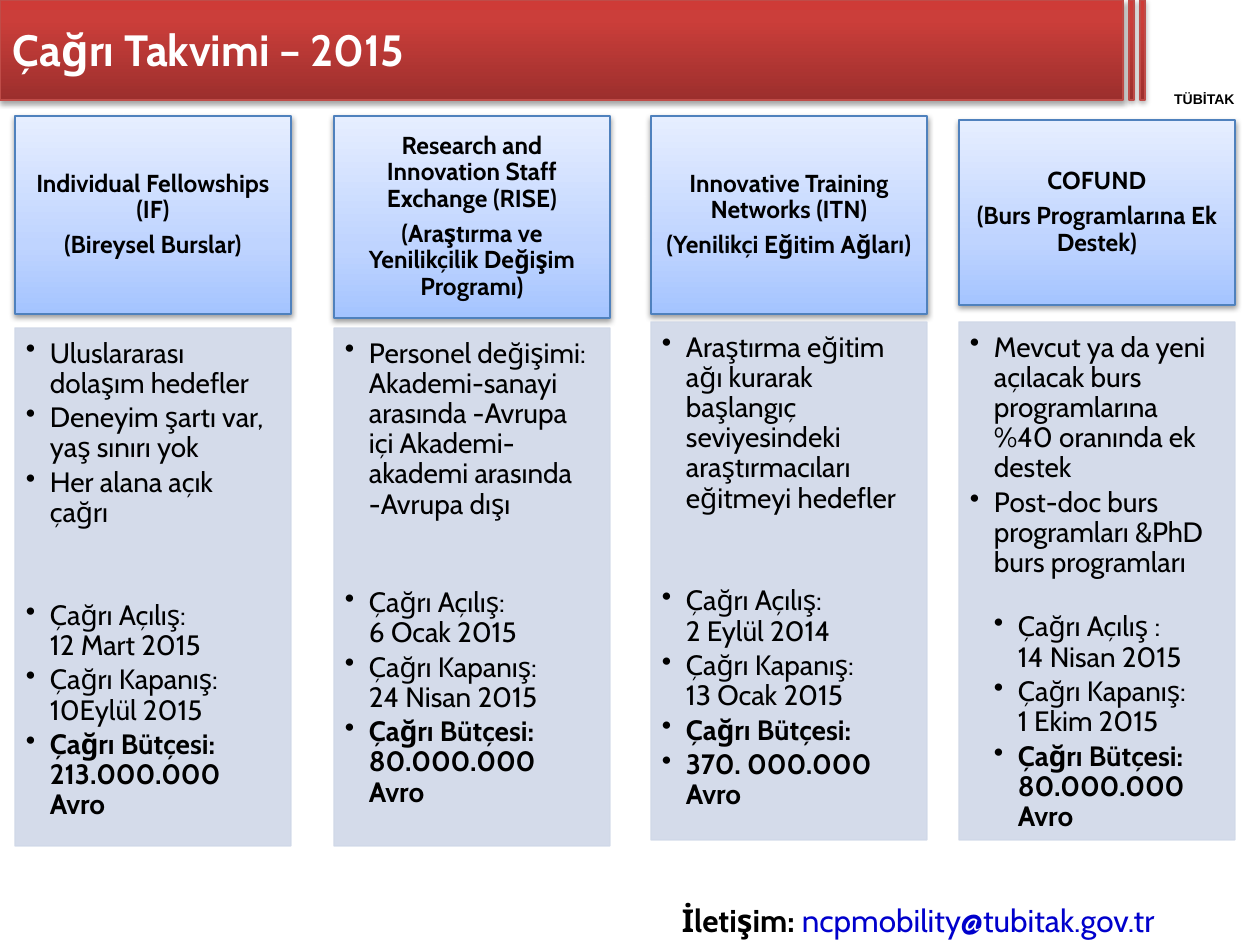
import lxml.etree
import pptx
import pptx.dml.color
import pptx.enum.shapes
import pptx.enum.text
import pptx.oxml.ns
import pptx.util

EMU_PER_PX = 914400 / 126
COLORS = {
    "black": "000000",
    "white": "FFFFFF",
    "link": "0000CC",
    "banner_line": "BF4C48",
    "card_line": "4F81BD",
    "panel": "D0D8E8",
}
BANNER_STOPS = [(0, "9C2F2D"), (80, "CB3E3A"), (100, "CE3B37")]
CARD_STOPS = [(0, "A4C4FF"), (35, "BFD4FF"), (100, "E6EEFF")]
CARD_WIDTH = 276
PANEL_HEIGHT = 518
INDENT = 24

PROGRAMMES = [
    {
        "left": 15, "top": 116, "height": 198, "panel_top": 328,
        "titles": ["Individual Fellowships (IF)", "(Bireysel Burslar)"],
        "features": ["Uluslararası dolaşım hedefler",
                     "Deneyim şartı var, yaş sınırı yok",
                     "Her alana açık çağrı"],
        "dates": ["Çağrı Açılış:\v12 Mart 2015", "Çağrı Kapanış:\v10Eylül 2015"],
        "budget": ["Çağrı Bütçesi: 213.000.000 Avro"],
        "gap": 39, "level": 1,
    },
    {
        "left": 334, "top": 116, "height": 202, "panel_top": 328,
        "titles": ["Research and Innovation Staff Exchange (RISE)",
                   "(Araştırma ve Yenilikçilik Değişim Programı)"],
        "features": ["Personel değişimi: Akademi-sanayi arasında -Avrupa içi "
                     "Akademi-akademi arasında -Avrupa dışı"],
        "dates": ["Çağrı Açılış:\v6 Ocak 2015", "Çağrı Kapanış:\v24 Nisan 2015"],
        "budget": ["Çağrı Bütçesi: 80.000.000 Avro"],
        "gap": 36.5, "level": 1,
    },
    {
        "left": 651, "top": 116, "height": 198, "panel_top": 322,
        "titles": ["Innovative Training Networks (ITN)", "(Yenilikçi Eğitim Ağları)"],
        "features": ["Araştırma eğitim ağı kurarak başlangıç seviyesindeki "
                     "araştırmacıları eğitmeyi hedefler"],
        "dates": ["Çağrı Açılış:\v2 Eylül 2014", "Çağrı Kapanış:\v13 Ocak 2015"],
        "budget": ["Çağrı Bütçesi:", "370. 000.000 Avro"],
        "gap": 39, "level": 1,
    },
    {
        "left": 959, "top": 120, "height": 185, "panel_top": 322,
        "titles": ["COFUND", "(Burs Programlarına Ek Destek)"],
        "features": ["Mevcut ya da yeni açılacak burs programlarına %40 oranında ek destek",
                     "Post-doc burs programları &PhD burs programları"],
        "dates": ["Çağrı Açılış :\v14 Nisan 2015", "Çağrı Kapanış:\v1 Ekim 2015"],
        "budget": ["Çağrı Bütçesi: 80.000.000 Avro"],
        "gap": 17, "level": 2,
    },
]


def px(length):
    return pptx.util.Emu(round(length * EMU_PER_PX))


def rgb(name):
    return pptx.dml.color.RGBColor.from_string(COLORS[name])


def add_child(parent, tag, **attributes):
    return lxml.etree.SubElement(parent, pptx.oxml.ns.qn(tag), attributes)


def set_alpha(color_format_owner, percent):
    for color in color_format_owner.iter(pptx.oxml.ns.qn("a:srgbClr")):
        add_child(color, "a:alpha", val=str(percent * 1000))


def add_rectangle(page, left, top, width, height, line):
    box = page.shapes.add_shape(pptx.enum.shapes.MSO_SHAPE.RECTANGLE,
                                px(left), px(top), px(width), px(height))
    box.shadow.inherit = False
    box.line.color.rgb = rgb(line)
    box.line.width = pptx.util.Pt(0.75)
    return box


def add_gradient_box(page, left, top, width, height, line, stops, shadow_alpha):
    box = add_rectangle(page, left, top, width, height, line)
    box.fill.gradient()
    box.fill.gradient_angle = 90
    properties = box._element.spPr
    stop_list = properties.find(".//" + pptx.oxml.ns.qn("a:gsLst"))
    for stop in list(stop_list):
        stop_list.remove(stop)
    for position, color in stops:
        stop = add_child(stop_list, "a:gs", pos=str(position * 1000))
        add_child(stop, "a:srgbClr", val=color)
    effects = properties.find(pptx.oxml.ns.qn("a:effectLst"))
    shadow = add_child(effects, "a:outerShdw", blurRad="40000", dist="21000",
                       dir="5400000", rotWithShape="0")
    color = add_child(shadow, "a:srgbClr", val=COLORS["black"])
    add_child(color, "a:alpha", val=str(shadow_alpha * 1000))
    return box


def set_frame(box, insets, anchor, wrap=True):
    frame = box.text_frame
    frame.word_wrap = wrap
    frame.vertical_anchor = anchor
    (frame.margin_left, frame.margin_top,
     frame.margin_right, frame.margin_bottom) = map(px, insets)
    return frame


def next_paragraph(frame):
    first = frame.paragraphs[0]
    return frame.add_paragraph() if first.runs else first


def set_font(font, size, color, bold=False, name="Cabin"):
    font.name = name
    font.size = pptx.util.Pt(size)
    font.bold = bold
    font.color.rgb = rgb(color)


def add_label(page, left, top, width, height, text, size, color, insets, anchor,
              alignment, name="Cabin"):
    box = page.shapes.add_textbox(px(left), px(top), px(width), px(height))
    para = set_frame(box, insets, anchor).paragraphs[0]
    para.text = text
    para.alignment = alignment
    set_font(para.font, size, color, True, name)


def add_card(page, programme):
    box = add_gradient_box(page, programme["left"], programme["top"], CARD_WIDTH,
                           programme["height"], "card_line", CARD_STOPS, 38)
    frame = set_frame(box, (14, 8, 14, 8), pptx.enum.text.MSO_ANCHOR.MIDDLE)
    for title in programme["titles"]:
        para = next_paragraph(frame)
        para.text = title
        para.alignment = pptx.enum.text.PP_ALIGN.CENTER
        para.line_spacing = 0.9
        para.space_after = pptx.util.Pt(5)
        set_font(para.font, 14, "black", True)


def add_bullet(frame, text, level=1, bold=False, gap=0):
    para = next_paragraph(frame)
    para.text = text
    para.level = level
    para.alignment = pptx.enum.text.PP_ALIGN.LEFT
    para.line_spacing = 0.9
    para.space_before = pptx.util.Pt(gap)
    para.space_after = pptx.util.Pt(2.4)
    properties = para._p.get_or_add_pPr()
    properties.set("marL", str(px(INDENT * level)))
    properties.set("indent", str(-px(INDENT)))
    add_child(properties, "a:buChar", char="•")
    set_font(para.font, 16, "black", bold)


def add_panel(page, programme):
    box = add_rectangle(page, programme["left"], programme["panel_top"], CARD_WIDTH,
                        PANEL_HEIGHT, "panel")
    box.fill.solid()
    box.fill.fore_color.rgb = rgb("panel")
    set_alpha(box._element.spPr, 90)
    frame = set_frame(box, (11, 11, 15, 18), pptx.enum.text.MSO_ANCHOR.TOP)
    for feature in programme["features"]:
        add_bullet(frame, feature)
    for index, date in enumerate(programme["dates"]):
        add_bullet(frame, date, programme["level"],
                   gap=programme["gap"] if index == 0 else 0)
    for line in programme["budget"]:
        add_bullet(frame, line, programme["level"], bold=True)


def add_contact(page):
    box = page.shapes.add_textbox(px(669), px(895), px(512), px(50))
    frame = set_frame(box, (13, 6, 13, 6), pptx.enum.text.MSO_ANCHOR.TOP, wrap=False)
    para = frame.paragraphs[0]
    for text, color, bold in [("İletişim: ", "black", True),
                              ("ncpmobility@tubitak.gov.tr", "link", False)]:
        span = para.add_run()
        span.text = text
        set_font(span.font, 18, color, bold)


def main():
    deck = pptx.Presentation()
    deck.slide_width, deck.slide_height = px(1260), px(945)
    page = deck.slides.add_slide(deck.slide_layouts[6])
    for left, width in [(0, 1123), (1129, 5), (1140, 5)]:
        add_gradient_box(page, left, 0, width, 100, "banner_line", BANNER_STOPS, 35)
    add_label(page, 1140, 91, 129, 16, "TÜBİTAK", 8, "black", (0, 0, 0, 0),
              pptx.enum.text.MSO_ANCHOR.TOP, pptx.enum.text.PP_ALIGN.CENTER, "Arial")
    add_label(page, 0, 0, 1126, 97, "Çağrı Takvimi – 2015", 25, "white", (13, 6, 13, 6),
              pptx.enum.text.MSO_ANCHOR.MIDDLE, pptx.enum.text.PP_ALIGN.LEFT)
    add_contact(page)
    for programme in PROGRAMMES:
        add_card(page, programme)
        add_panel(page, programme)
    deck.save("out.pptx")


if __name__ == "__main__":
    main()
